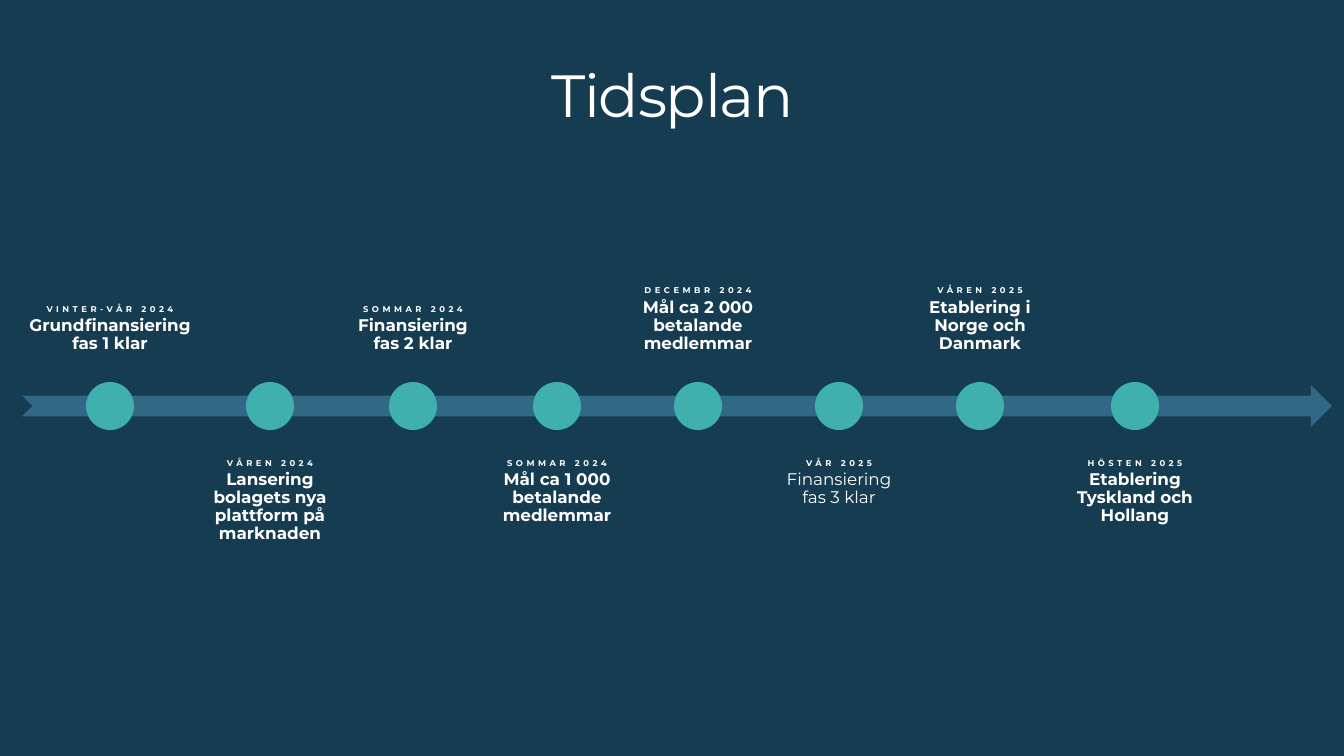
from dataclasses import dataclass

from lxml import etree
from pptx import Presentation
from pptx import util as u
from pptx.dml.color import RGBColor
from pptx.enum import shapes, text
from pptx.oxml import ns

SCALE = 914400 / 50.4


def px(n):
    return u.Emu(round(n * SCALE))


@dataclass
class Theme:
    back: str = "163C51"
    arrow: str = "4181A3"
    dot: str = "3FB0AC"
    ink: str = "FFFFFF"
    font: str = "Montserrat"
    title: int = 85
    date: int = 12
    goal: int = 24


def write(par, words, size, theme, bold=False, track=0, line=0.9, after=0):
    """Fill a centred paragraph; track is letter spacing in points."""
    par.text = words
    par.alignment = text.PP_ALIGN.CENTER
    par.line_spacing = line
    par.space_before = u.Pt(0)
    par.space_after = u.Pt(after)
    for run in par.runs:
        run.font.name = theme.font
        run.font.size = u.Pt(size)
        run.font.bold = bold
        run.font.color.rgb = RGBColor.from_string(theme.ink)
        run.font._element.set("spc", str(round(track * 100)))


class Deck:
    def __init__(self, theme):
        self.theme = theme
        self.file = Presentation()
        self.file.slide_width, self.file.slide_height = px(1344), px(756)
        self.slide = self.file.slides.add_slide(self.file.slide_layouts[5])
        fill = self.slide.background.fill
        fill.solid()
        fill.fore_color.rgb = RGBColor.from_string(theme.back)

    def frame(self, shape, pad, anchor):
        frame = shape.text_frame
        frame.word_wrap = True
        frame.auto_size = text.MSO_AUTO_SIZE.NONE
        frame.vertical_anchor = anchor
        frame.margin_left = frame.margin_right = px(pad)
        frame.margin_top = frame.margin_bottom = px(pad)
        return frame

    def title(self, words, x, y, w, h):
        shape = self.slide.shapes.title
        shape.left, shape.top, shape.width, shape.height = map(px, (x, y, w, h))
        frame = self.frame(shape, 3, text.MSO_ANCHOR.TOP)
        write(frame.paragraphs[0], words, self.theme.title, self.theme,
              track=-1.7, line=0.8)

    def shape(self, kind, color, x, y, w, h, alpha=None):
        shape = self.slide.shapes.add_shape(kind, *map(px, (x, y, w, h)))
        shape.shadow.inherit = False
        shape.fill.solid()
        shape.fill.fore_color.rgb = RGBColor.from_string(color)
        shape.line.fill.background()
        if alpha:
            tone = shape.fill._xPr.find(".//" + ns.qn("a:srgbClr"))
            etree.SubElement(tone, ns.qn("a:alpha"), val=str(alpha * 1000))

    def label(self, date, goal, bold, anchor, x, y, w, h):
        box = self.slide.shapes.add_textbox(*map(px, (x, y, w, h)))
        frame = self.frame(box, 5, anchor)
        write(frame.paragraphs[0], date, self.theme.date, self.theme,
              bold=True, track=5, after=4)
        write(frame.add_paragraph(), goal, self.theme.goal, self.theme, bold=bold)


# middle of dot, label width, date, goal, bold; labels go above and below in turn
STEPS = [
    (110, 175, "VINTER-VÅR 2024", "Grundfinansiering fas 1 klar", True),
    (270, 136, "VÅREN 2024", "Lansering bolagets nya plattform på marknaden", True),
    (413, 141, "SOMMAR 2024", "Finansiering fas 2 klar", True),
    (557, 137, "SOMMAR 2024", "Mål ca 1 000 betalande medlemmar", True),
    (698, 136, "DECEMBR 2024", "Mål ca 2 000 betalande medlemmar", True),
    (839, 135, "VÅR 2025", "Finansiering\vfas 3 klar", False),
    (980, 138, "VÅREN 2025", "Etablering i Norge och Danmark", True),
    (1135, 146, "HÖSTEN 2025", "Etablering Tyskland och Hollang", True),
]
AXIS, DOT, TALL, GAP = 406, 48, 194, 48


def main():
    theme = Theme()
    deck = Deck(theme)
    deck.title("Tidsplan", 67, 69, 1211, 79)
    kinds = shapes.MSO_SHAPE
    deck.shape(kinds.NOTCHED_RIGHT_ARROW, theme.arrow,
               22, AXIS - 21, 1310, 42, alpha=65)
    for i, (mid, wide, date, goal, bold) in enumerate(STEPS):
        if i % 2:
            top, anchor = AXIS + GAP, text.MSO_ANCHOR.TOP
        else:
            top, anchor = AXIS - GAP - TALL, text.MSO_ANCHOR.BOTTOM
        deck.label(date, goal, bold, anchor, mid - wide / 2, top, wide, TALL)
        deck.shape(kinds.OVAL, theme.dot,
                   mid - DOT / 2, AXIS - DOT / 2, DOT, DOT)
    deck.file.save("out.pptx")


if __name__ == "__main__":
    main()
